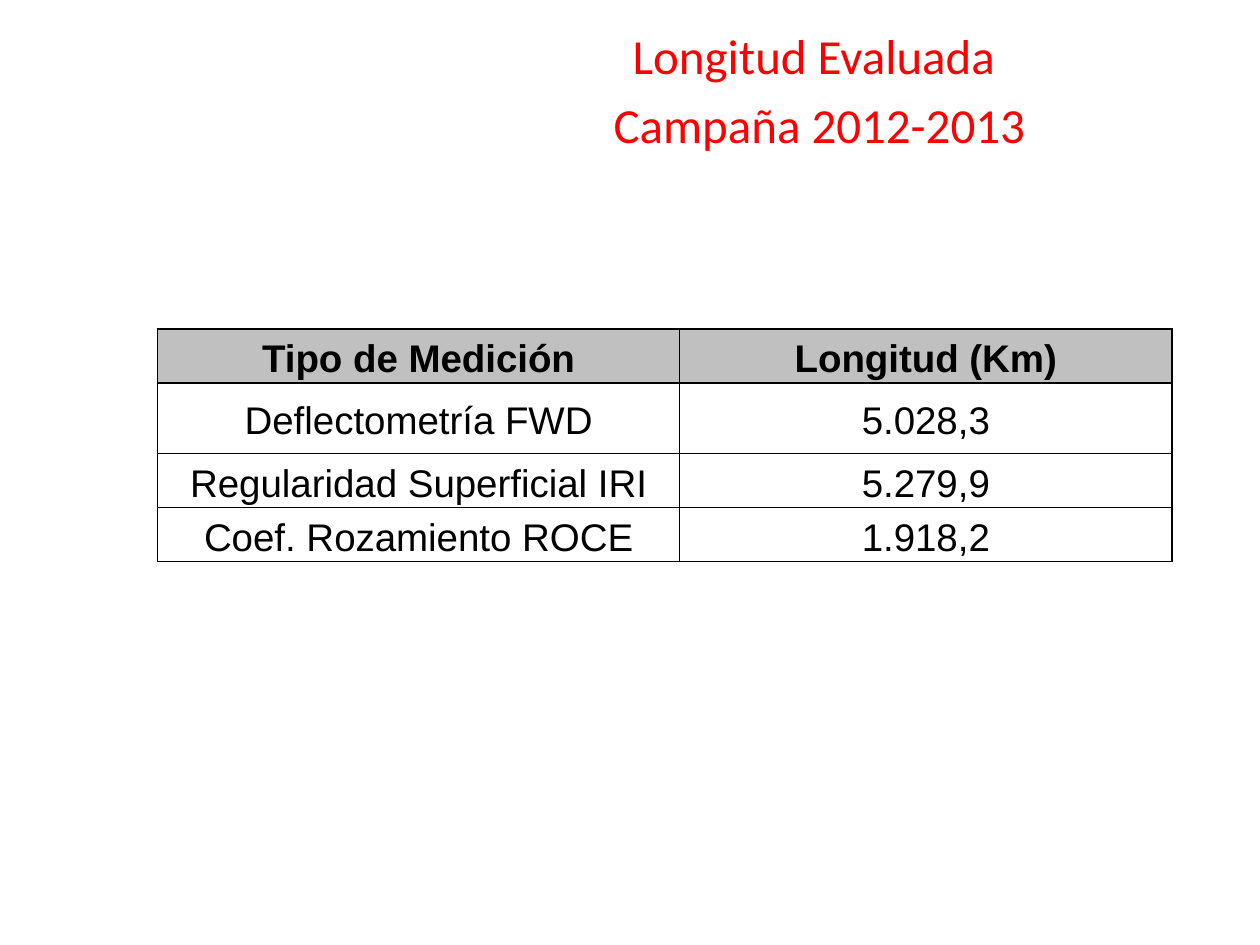
from lxml import etree
from pptx import Presentation
from pptx import util as u
from pptx.dml.color import RGBColor
from pptx.enum import text
from pptx.oxml.ns import qn

HEADING = ["Longitud Evaluada ", "Campaña 2012-2013"]
MEASUREMENTS = [
    ("Tipo de Medición", "Longitud (Km)"),
    ("Deflectometría FWD", "5.028,3"),
    ("Regularidad Superficial IRI", "5.279,9"),
    ("Coef. Rozamiento ROCE", "1.918,2"),
]
COLUMN_WIDTHS = [10.52, 9.93]
ROW_HEIGHTS = [1.09, 1.42, 1.09, 1.09]
COLORS = {"heading": "FF0000", "ink": "000000", "header": "C0C0C0"}


def style(paragraph, font_name, size, color, bold=False):
    paragraph.alignment = text.PP_ALIGN.CENTER
    for run in paragraph.runs:
        run.font.name = font_name
        run.font.size = u.Pt(size)
        run.font.bold = bold
        run.font.color.rgb = RGBColor.from_string(COLORS[color])


def add_borders(cell):
    properties = cell._tc.get_or_add_tcPr()
    for index, side in enumerate(("a:lnL", "a:lnR", "a:lnT", "a:lnB")):
        line = etree.Element(qn(side), w=str(u.Pt(1)))
        fill = etree.SubElement(line, qn("a:solidFill"))
        etree.SubElement(fill, qn("a:srgbClr"), val=COLORS["ink"])
        properties.insert(index, line)


def add_heading(slide):
    heading = slide.shapes.title
    heading.left, heading.top = u.Cm(5.72), u.Cm(0.64)
    heading.width, heading.height = u.Cm(21.59), u.Cm(2.11)
    frame = heading.text_frame
    frame.text = "\n".join(HEADING)
    frame.word_wrap = True
    frame.auto_size = text.MSO_AUTO_SIZE.NONE
    frame.vertical_anchor = text.MSO_ANCHOR.MIDDLE
    frame.margin_top = u.Cm(0.33)
    for index, paragraph in enumerate(frame.paragraphs):
        paragraph.space_before = u.Pt(5.6 if index else 0)
        style(paragraph, "Calibri", 28, "heading")


def add_measurements(slide):
    table = slide.shapes.add_table(
        len(MEASUREMENTS), len(COLUMN_WIDTHS), u.Cm(3.18), u.Cm(6.63),
        u.Cm(sum(COLUMN_WIDTHS)), u.Cm(sum(ROW_HEIGHTS))).table
    table.horz_banding = False
    for column, width in zip(table.columns, COLUMN_WIDTHS):
        column.width = u.Cm(width)
    for row_index, (row, height) in enumerate(zip(table.rows, ROW_HEIGHTS)):
        row.height = u.Cm(height)
        is_header = row_index == 0
        for cell, value in zip(row.cells, MEASUREMENTS[row_index]):
            cell.text_frame.text = value
            cell.vertical_anchor = text.MSO_ANCHOR.MIDDLE
            cell.margin_left = cell.margin_right = u.Cm(0.38)
            cell.margin_top = cell.margin_bottom = 0
            if is_header:
                cell.fill.solid()
                cell.fill.fore_color.rgb = RGBColor.from_string(COLORS["header"])
            else:
                cell.fill.background()
            add_borders(cell)
            paragraph = cell.text_frame.paragraphs[0]
            paragraph.line_spacing = 1.15
            style(paragraph, "Arial", 22, "ink", is_header)


def main():
    deck = Presentation()
    deck.slide_width, deck.slide_height = u.Cm(25.4), u.Cm(19.05)
    slide = deck.slides.add_slide(deck.slide_layouts[5])
    add_heading(slide)
    add_measurements(slide)
    deck.save("out.pptx")


if __name__ == "__main__":
    main()
